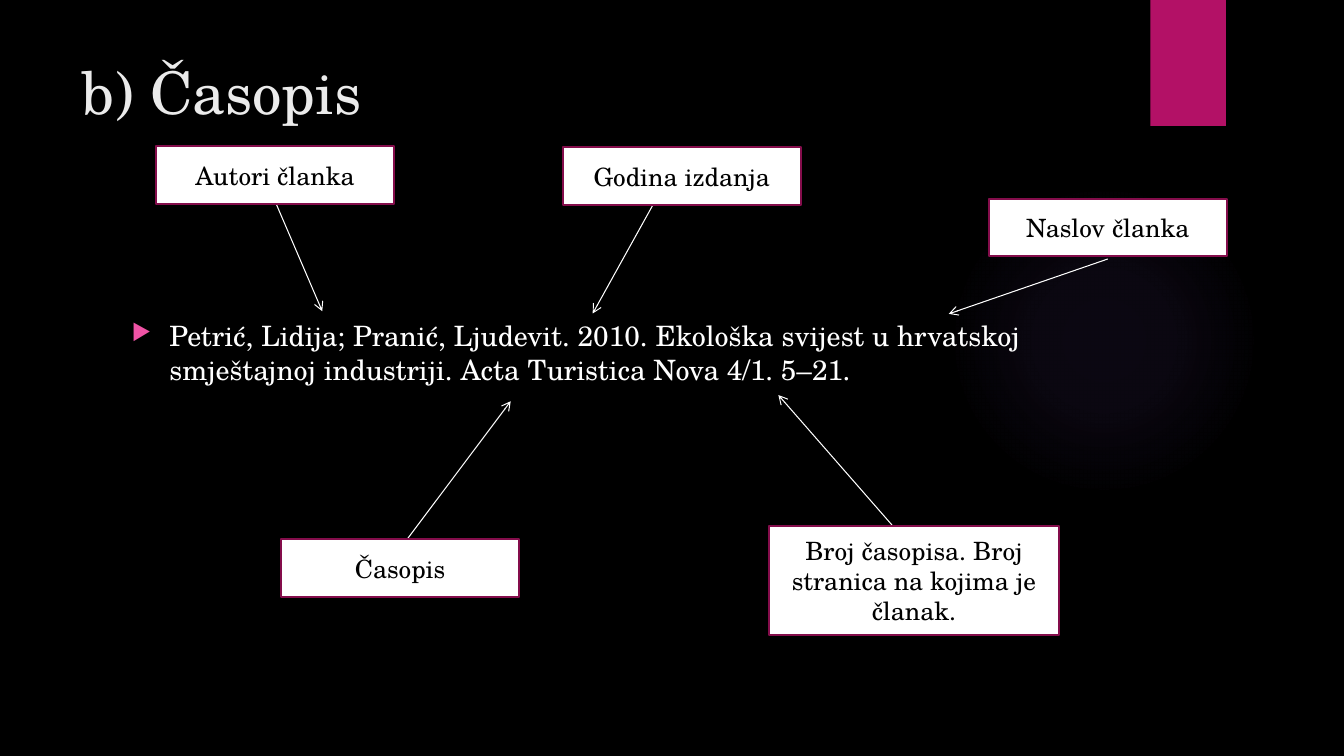
from lxml.etree import SubElement
from pptx import Presentation
from pptx.dml.color import RGBColor
from pptx.enum.shapes import MSO_CONNECTOR, MSO_SHAPE
from pptx.enum.text import MSO_ANCHOR, MSO_AUTO_SIZE, PP_ALIGN
from pptx.oxml import parse_xml
from pptx.oxml.ns import nsdecls, qn
from pptx.util import Pt


def color(code):
    return RGBColor.from_string(code)


class Deck:
    face = "TeX Gyre Schola"
    pink, edge, white = "B31166", "840D4B", "FFFFFF"

    def __init__(self, prs):
        self.slide = prs.slides.add_slide(prs.slide_layouts[5])
        self.shapes = self.slide.shapes
        fill = self.slide.background.fill
        fill.solid()
        fill.fore_color.rgb = color("000000")

    def letter(self, shape, text, size, code, align=PP_ALIGN.LEFT,
               anchor=MSO_ANCHOR.TOP):
        frame = shape.text_frame
        form = {"text": text, "word_wrap": True,
                "auto_size": MSO_AUTO_SIZE.NONE, "vertical_anchor": anchor}
        for key, value in form.items():
            setattr(frame, key, value)
        para = frame.paragraphs[0]
        para.alignment = align
        font = para.runs[0].font
        for key, value in {"name": self.face, "size": Pt(size)}.items():
            setattr(font, key, value)
        font.color.rgb = color(code)
        return para

    def title(self, text, left, top, width, height):
        shape = self.shapes.title
        place = {"left": left, "top": top, "width": width, "height": height}
        for key, value in place.items():
            setattr(shape, key, Pt(value))
        self.letter(shape, text, 42, "EBEBEB")

    def panel(self, kind, left, top, width, height, fill=None, line=None):
        shape = self.shapes.add_shape(
            kind, Pt(left), Pt(top), Pt(width), Pt(height))
        shape.shadow.inherit = False
        if fill:
            shape.fill.solid()
            shape.fill.fore_color.rgb = color(fill)
        if line:
            shape.line.color.rgb = color(line)
            shape.line.width = Pt(1.5)
        else:
            shape.line.fill.background()
        return shape

    def glow(self, left, top, size, code, stops):
        shape = self.panel(MSO_SHAPE.OVAL, left, top, size, size)
        marks = "".join(
            f'<a:gs pos="{pos * 1000}"><a:srgbClr val="{code}">'
            f'<a:alpha val="{alpha * 1000}"/></a:srgbClr></a:gs>'
            for pos, alpha in stops)
        grad = parse_xml(
            f'<a:gradFill {nsdecls("a")}><a:gsLst>{marks}</a:gsLst>'
            '<a:path path="circle"><a:fillToRect l="50000" t="50000" '
            'r="50000" b="50000"/></a:path></a:gradFill>')
        shape.element.spPr.find(qn("a:prstGeom")).addnext(grad)

    def label(self, text, left, top, width=170, height=41):
        shape = self.panel(MSO_SHAPE.RECTANGLE, left, top, width, height,
                           self.white, self.edge)
        self.letter(shape, text, 18, "000000", PP_ALIGN.CENTER,
                    MSO_ANCHOR.MIDDLE)

    def bullet(self, text, left, top, width, height):
        box = self.shapes.add_textbox(
            Pt(left), Pt(top), Pt(width), Pt(height))
        para = self.letter(box, text, 20, self.white)
        props = para._p.get_or_add_pPr()
        props.set("marL", str(Pt(27)))
        props.set("indent", str(-Pt(27)))
        tint = SubElement(props, qn("a:buClr"))
        SubElement(tint, qn("a:srgbClr"), val="EF53A5")
        SubElement(props, qn("a:buSzPct"), val="80000")
        SubElement(props, qn("a:buChar"), char="▶")

    def arrow(self, *ends):
        link = self.shapes.add_connector(
            MSO_CONNECTOR.STRAIGHT, *[Pt(end) for end in ends])
        link.line.color.rgb = color(self.white)
        link.line.width = Pt(0.75)
        props = link.element.spPr
        SubElement(props.find(qn("a:ln")), qn("a:tailEnd"), type="arrow")
        SubElement(props, qn("a:effectLst"))


def main():
    prs = Presentation()
    prs.slide_width, prs.slide_height = Pt(960), Pt(540)
    deck = Deck(prs)

    # Backdrop
    deck.glow(677.5, 131.8, 221.8, "9B6BF2", [(0, 7), (36, 6), (69, 0)])
    deck.panel(MSO_SHAPE.RECTANGLE, 821.7, 0, 54, 90, deck.pink)

    # Title and citation
    deck.title("b) Časopis", 51, 36, 741, 110)
    deck.bullet("Petrić, Lidija; Pranić, Ljudevit. 2010. Ekološka svijest u "
                "hrvatskoj smještajnoj industriji. Acta Turistica Nova 4/1. "
                "5–21.", 87, 224, 704, 268)

    # Arrows from each label to its part of the citation
    for ends in [(196.8, 144.5, 230.2, 222.3), (466.3, 146.5, 423.4, 223.9),
                 (791.3, 185, 677.7, 224.2), (290.5, 385.6, 364.8, 286.6),
                 (637.2, 375.1, 556, 282.2)]:
        deck.arrow(*ends)

    # Labels
    for item in [("Autori članka", 111.5, 104.5),
                 ("Godina izdanja", 402, 105.2),
                 ("Naslov članka", 706.3, 142),
                 ("Časopis", 200.8, 385.2),
                 ("Broj časopisa. Broj stranica na kojima je članak.",
                  549.2, 375.7, 207.3, 78)]:
        deck.label(*item)

    prs.save("out.pptx")


if __name__ == "__main__":
    main()
